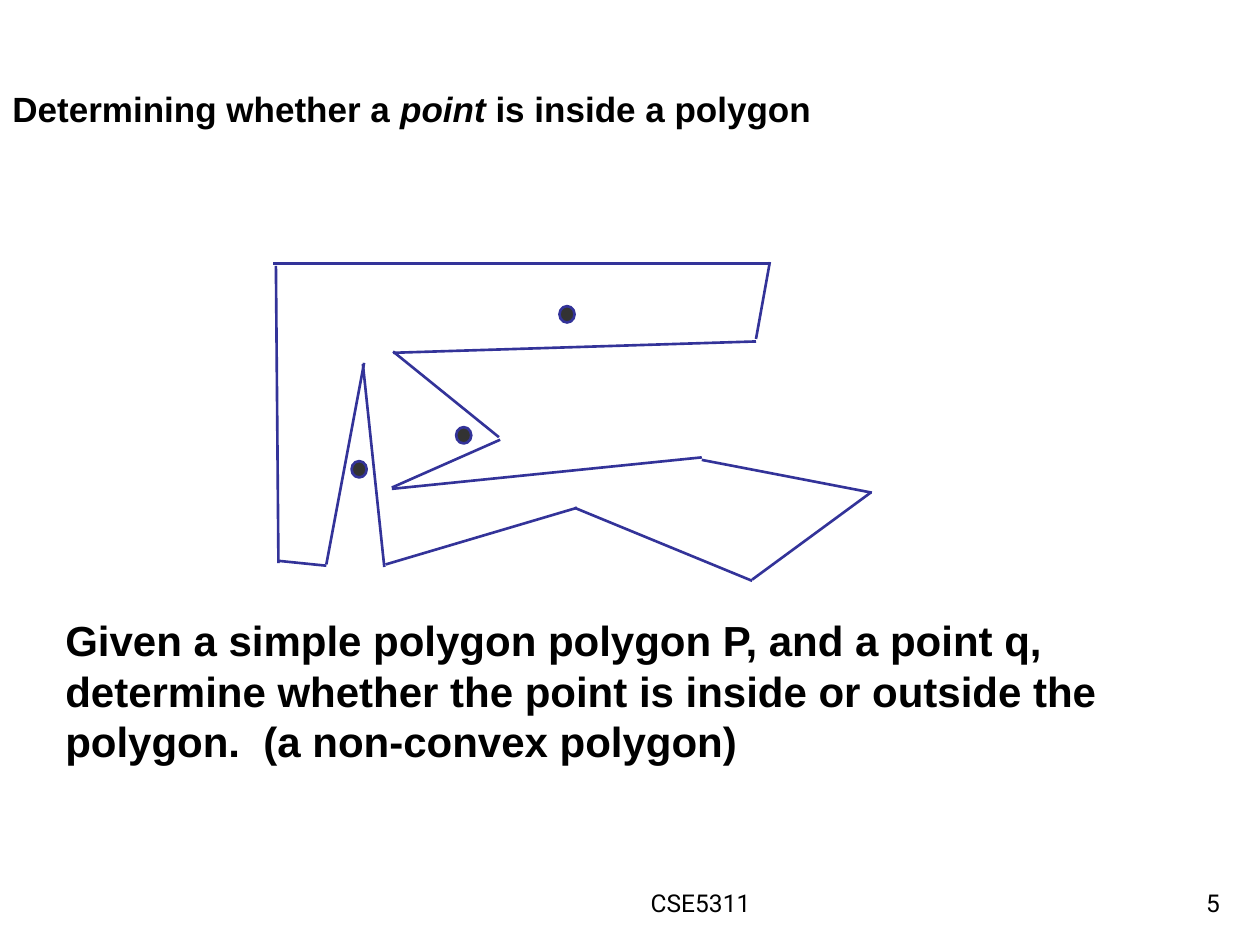
from lxml import etree
from pptx import Presentation
from pptx.dml.color import RGBColor
from pptx.enum.shapes import MSO_CONNECTOR as CONN, MSO_SHAPE as SHAPE
from pptx.enum.text import MSO_ANCHOR as ANCHOR, PP_ALIGN as ALIGN
from pptx.oxml.ns import qn
from pptx.util import Inches, Pt

BLACK = RGBColor(0x00, 0x00, 0x00)
WHITE = RGBColor(0xFF, 0xFF, 0xFF)
NAVY = RGBColor(0x33, 0x33, 0x99)
CHARCOAL = RGBColor(0x33, 0x33, 0x33)

prs = Presentation()
prs.slide_width, prs.slide_height = Inches(10), Inches(7.5)
s = prs.slides.add_slide(prs.slide_layouts[6])
s.background.fill.solid()
s.background.fill.fore_color.rgb = WHITE


def add_text(box, runs, anchor, align, **font):
    tf = s.shapes.add_textbox(*map(Inches, box)).text_frame
    tf.word_wrap = True
    tf.vertical_anchor = anchor
    p = tf.paragraphs[0]
    p.alignment = align
    for text, italic in runs:
        r = p.add_run()
        r.text = text
        r.font.color.rgb = BLACK
        for name, value in {**font, "italic": italic}.items():
            setattr(r.font, name, value)


footer = {"name": "Roboto", "size": Pt(14)}
add_text((4, 6.83, 3.17, 0.5), [("CSE5311 ", False)], ANCHOR.BOTTOM, ALIGN.CENTER, **footer)
add_text((7.7, 6.83, 2.08, 0.5), [("5", False)], ANCHOR.BOTTOM, ALIGN.RIGHT, **footer)

title = [("Determining whether a ", False), ("point", True), (" is inside a polygon", False)]
add_text((0, 0, 9.42, 1.08), title, ANCHOR.BOTTOM, ALIGN.LEFT,
         name="Arial", size=Pt(20), bold=True)

polygon = s.shapes.add_group_shape()
edges = [
    (2.17, 2.09, 6.11, 2.09), (6.11, 2.08, 6, 2.69), (3.12, 2.8, 6, 2.71),
    (3.12, 2.79, 3.96, 3.47), (3.97, 3.49, 3.11, 3.87), (3.11, 3.88, 5.57, 3.63),
    (5.57, 3.65, 6.92, 3.91), (2.19, 2.11, 2.21, 4.47), (2.2, 4.45, 2.59, 4.49),
    (2.59, 4.48, 2.89, 2.88), (2.88, 2.89, 3.05, 4.5), (3.06, 4.48, 4.58, 4.03),
    (4.56, 4.03, 5.97, 4.61), (5.97, 4.6, 6.91, 3.91),
]
for edge in edges:
    line = polygon.shapes.add_connector(CONN.STRAIGHT, *map(Inches, edge))
    line.line.color.rgb = NAVY
    line.line.width = Pt(1.5)
    etree.SubElement(line._element.spPr, qn("a:effectLst"))

for left, top in [(4.44, 2.43), (2.79, 3.66), (3.62, 3.39)]:
    dot = polygon.shapes.add_shape(SHAPE.OVAL, Inches(left), Inches(top), Inches(0.12), Inches(0.13))
    dot.shadow.inherit = False
    dot.fill.solid()
    dot.fill.fore_color.rgb = CHARCOAL
    dot.line.color.rgb = NAVY
    dot.line.width = Pt(1.5)

question = ("Given a simple polygon polygon P, and a point q, determine whether "
            "the point is inside or outside the polygon.  (a non-convex polygon)")
add_text((0.42, 4.83, 9, 1.9), [(question, False)], ANCHOR.TOP, ALIGN.LEFT,
         name="Arial", size=Pt(24), bold=True)

prs.save("out.pptx")
